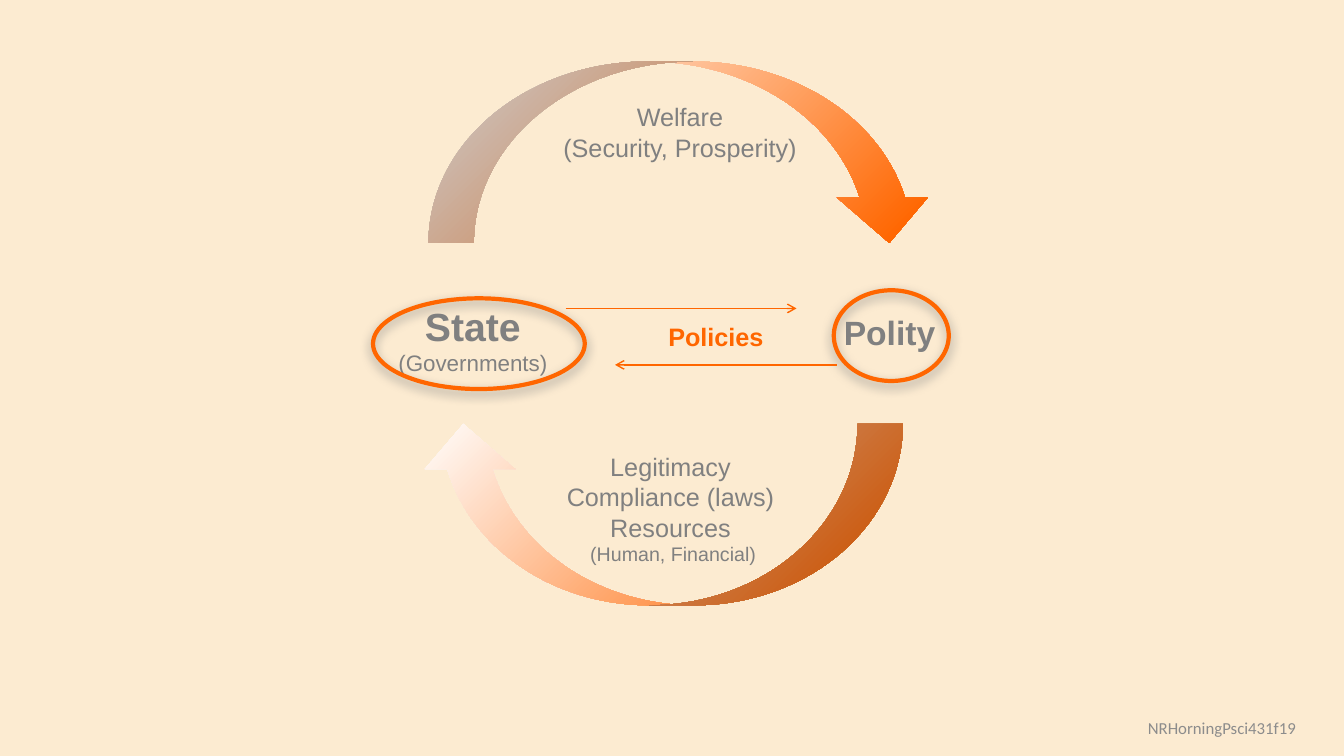
"""Builds the slide on the exchange between state and polity."""
from pptx import Presentation
from pptx.dml.color import RGBColor
from pptx.enum.shapes import MSO_CONNECTOR, MSO_SHAPE
from pptx.enum.text import MSO_ANCHOR, MSO_AUTO_SIZE, PP_ALIGN
from pptx.oxml import parse_xml
from pptx.oxml.ns import nsdecls, qn
from pptx.util import Inches, Pt

CENTER, LEFT = PP_ALIGN.CENTER, PP_ALIGN.LEFT
TOP, MIDDLE = MSO_ANCHOR.TOP, MSO_ANCHOR.MIDDLE
OVAL, CURVED_ARROW = MSO_SHAPE.OVAL, MSO_SHAPE.CURVED_LEFT_ARROW
STRAIGHT = MSO_CONNECTOR.STRAIGHT
FIT_SHAPE = MSO_AUTO_SIZE.SHAPE_TO_FIT_TEXT

CREAM = RGBColor(0xFC, 0xEB, 0xD1)
GRAY = RGBColor(0x80, 0x80, 0x80)
FOOTER_GRAY = RGBColor(0x8C, 0x8C, 0x8C)
ORANGE = RGBColor(0xFF, 0x66, 0x00)
WHITE = RGBColor(0xFF, 0xFF, 0xFF)

GRADIENT = f"""<a:gradFill {nsdecls('a')} rotWithShape="0"><a:gsLst>
<a:gs pos="6000"><a:srgbClr val="{ORANGE}"/></a:gs>
<a:gs pos="100000"><a:srgbClr val="{WHITE}"/></a:gs></a:gsLst>
<a:path path="circle"><a:fillToRect l="100000" t="100000"/></a:path></a:gradFill>"""
SHADOW = f"""<a:outerShdw {nsdecls('a')} blurRad="{Pt(8)}" dist="{Pt(3)}"
dir="5400000" rotWithShape="0"><a:srgbClr val="{GRAY}"><a:alpha val="75000"/>
</a:srgbClr></a:outerShdw>"""
ARROWHEAD = f'<a:tailEnd {nsdecls("a")} type="arrow"/>'
NO_EFFECT = f'<a:effectLst {nsdecls("a")}/>'

prs = Presentation()
prs.slide_width, prs.slide_height = Inches(13.33), Inches(7.5)
s = prs.slides.add_slide(prs.slide_layouts[6])
s.background.fill.solid()
s.background.fill.fore_color.rgb = CREAM


def add_text(box, lines, color=GRAY, align=CENTER, font="Arial", wrap=False, anchor=TOP):
    tf = s.shapes.add_textbox(*map(Inches, box)).text_frame
    tf.word_wrap = wrap
    tf.vertical_anchor = anchor
    if not wrap:
        tf.auto_size = FIT_SHAPE
    for i, (text, size, bold) in enumerate(lines):
        p = tf.paragraphs[0] if i == 0 else tf.add_paragraph()
        p.alignment = align
        r = p.add_run()
        r.text = text
        r.font.name, r.font.size, r.font.bold = font, Pt(size), bold
        r.font.color.rgb = color


add_text((3.84, 2.95, 1.7, 0.84), [("State", 28, True), ("(Governments)", 16, False)])
add_text((8.27, 3.05, 1.12, 0.5), [("Polity", 24, True)], align=LEFT)
add_text((5.48, 0.96, 2.53, 0.7),
         [("Welfare", 18, False), ("(Security, Prosperity)", 18, False)])
add_text((5.51, 4.43, 2.28, 1.25),
         [("Legitimacy", 18, False), ("Compliance (laws)", 18, False),
          ("Resources", 18, False), (" (Human, Financial)", 14, False)])

for box in [(3.7, 2.96, 2.1, 0.9), (8.27, 2.88, 1.14, 0.9)]:
    sp = s.shapes.add_shape(OVAL, *map(Inches, box))
    sp.fill.background()
    sp.line.color.rgb = ORANGE
    sp.line.width = Pt(3)
    sp.shadow.inherit = False
    sp.element.spPr.find(qn("a:effectLst")).append(parse_xml(SHADOW))

add_text((6.53, 3.14, 1.16, 0.4), [("Policies", 18, True)], color=ORANGE, align=LEFT)

for box, rotation in [((5.86, -1, 1.8, 5.02), 270), ((5.65, 2.7, 1.8, 4.81), 90)]:
    sp = s.shapes.add_shape(CURVED_ARROW, *map(Inches, box))
    sp.rotation = rotation
    sp.element.spPr.find(qn("a:prstGeom")).addnext(parse_xml(GRADIENT))
    sp.line.fill.background()
    sp.shadow.inherit = False

for x1, x2, y in [(8.3, 6.1, 3.62), (5.61, 7.9, 3.06)]:
    line = s.shapes.add_connector(STRAIGHT, Inches(x1), Inches(y), Inches(x2), Inches(y))
    line.line.color.rgb = ORANGE
    line.line.width = Pt(1)
    spPr = line.element.spPr
    spPr.find(qn("a:ln")).append(parse_xml(ARROWHEAD))
    spPr.append(parse_xml(NO_EFFECT))

add_text((9.87, 7.02, 4.5, 0.4), [("NRHorningPsci431f19", 12, False)],
         color=FOOTER_GRAY, font="Calibri", wrap=True, anchor=MIDDLE)

prs.save("out.pptx")
